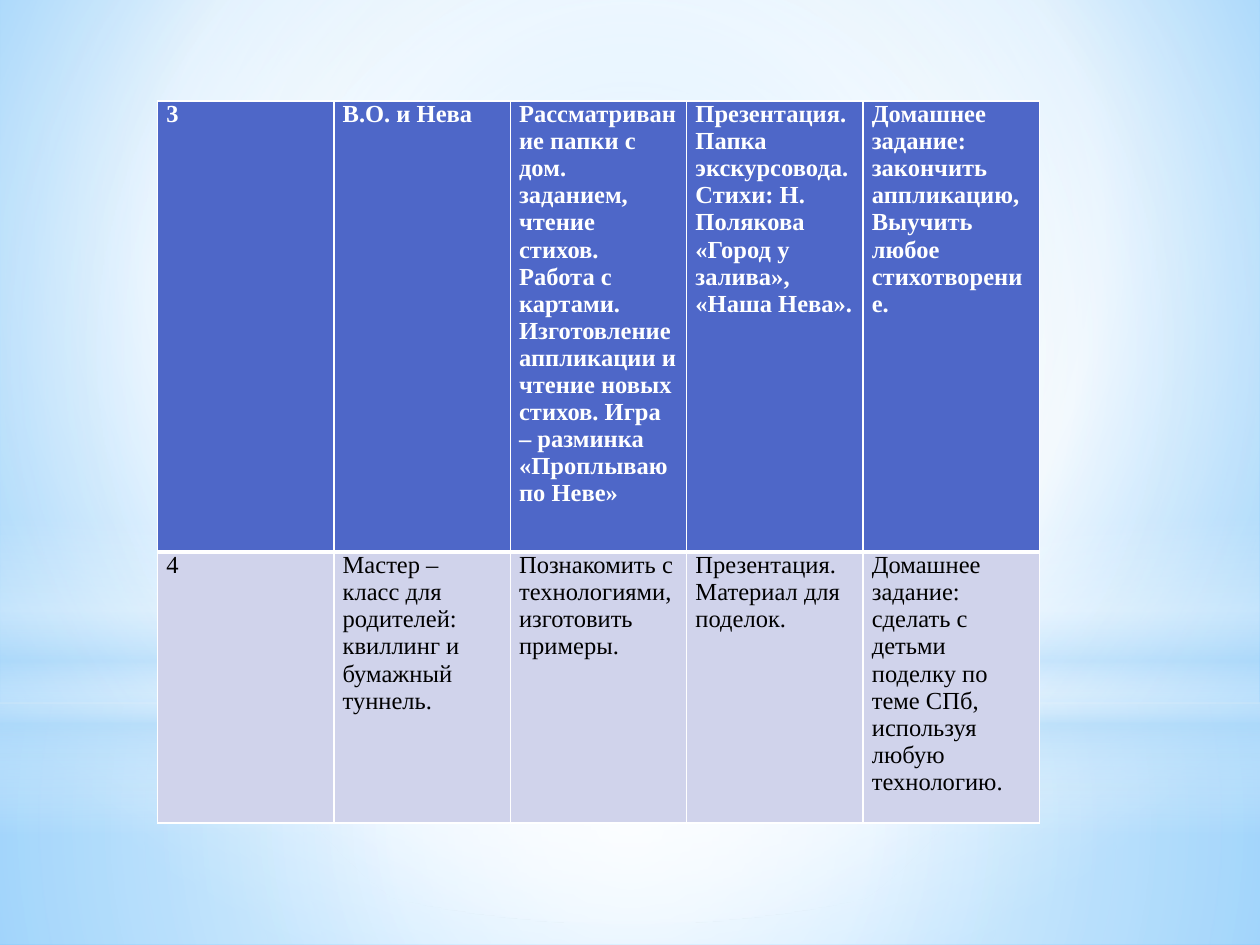
import pptx
import pptx.dml.color
import pptx.enum.shapes
import pptx.oxml
import pptx.oxml.ns
import pptx.util

COLORS = {
    "sky": "9ED5FF",
    "edge": "5BB9FF",
    "haze": "B4DCFA",
    "white": "FFFFFF",
    "black": "000000",
    "header": "4E67C8",
    "body": "D0D3EB",
}
WIDTH, HEIGHT = pptx.util.Inches(10), pptx.util.Inches(7.5)
COLUMN_WIDTH = pptx.util.Inches(1.4)
ROW_HEIGHTS = [3.58, 2.15]
RECTANGLE = pptx.enum.shapes.MSO_SHAPE.RECTANGLE
OVAL = pptx.enum.shapes.MSO_SHAPE.OVAL

CENTER = '<a:path path="circle"><a:fillToRect l="50000" t="50000" r="50000" b="50000"/></a:path>'
UPPER = '<a:path path="circle"><a:fillToRect l="20000" t="10000" r="20000" b="60000"/></a:path>'
DOWNWARD = '<a:lin ang="5400000" scaled="0"/>'

BACKDROP = [(0, "sky", 100), (60, "white", 100), (100, "edge", 100)]
GLOWS = [
    (RECTANGLE, 0.744, 0.256, CENTER,
     [(0, "white", 91), (37, "white", 76), (100, "haze", 79)]),
    (RECTANGLE, 0, 0.744, CENTER,
     [(0, "white", 89), (48, "white", 62), (100, "haze", 79)]),
    (RECTANGLE, 0.549, 0.333, DOWNWARD,
     [(0, "white", 0), (29, "white", 30), (45, "haze", 40),
      (55, "white", 26), (65, "haze", 60), (100, "white", 0)]),
    (OVAL, 0.233, 0.744, CENTER, [(0, "white", 100), (56, "white", 0)]),
]

LESSONS = [
    [
        ["3"],
        ["В.О. и Нева"],
        ["Рассматривание папки с дом. заданием, чтение стихов.",
         "Работа с картами.",
         "Изготовление аппликации и чтение новых стихов. Игра – разминка «Проплываю по Неве»"],
        ["Презентация.",
         "Папка экскурсовода.",
         "Стихи: Н. Полякова «Город у залива», «Наша Нева»."],
        ["Домашнее задание: закончить аппликацию,",
         "Выучить любое",
         "стихотворение."],
    ],
    [
        ["4"],
        ["Мастер – класс для родителей:",
         "квиллинг и бумажный туннель."],
        ["Познакомить с технологиями,",
         "изготовить примеры."],
        ["Презентация.",
         "Материал для поделок."],
        ["Домашнее задание: сделать с детьми поделку по теме СПб, используя любую технологию."],
    ],
]


def rgb(name):
    return pptx.dml.color.RGBColor.from_string(COLORS[name])


def apply_gradient(fill, element, stops, direction):
    fill.solid()
    stop_xml = "".join(
        f'<a:gs pos="{position * 1000}"><a:srgbClr val="{COLORS[color]}">'
        f'<a:alpha val="{opacity * 1000}"/></a:srgbClr></a:gs>'
        for position, color, opacity in stops
    )
    gradient = pptx.oxml.parse_xml(
        f'<a:gradFill {pptx.oxml.ns.nsdecls("a")} rotWithShape="1">'
        f"<a:gsLst>{stop_xml}</a:gsLst>{direction}</a:gradFill>"
    )
    plain = element.find(".//" + pptx.oxml.ns.qn("a:solidFill"))
    plain.getparent().replace(plain, gradient)


def add_glow(slide, outline, top, height, direction, stops):
    glow = slide.shapes.add_shape(
        outline, 0, int(HEIGHT * top), WIDTH, int(HEIGHT * height))
    glow.shadow.inherit = False
    glow.line.fill.background()
    apply_gradient(glow.fill, glow.element, stops, direction)


def set_borders(cell, widths):
    properties = cell._tc.get_or_add_tcPr()
    for index, (side, points) in enumerate(widths.items()):
        border = pptx.oxml.parse_xml(
            f'<a:ln{side} {pptx.oxml.ns.nsdecls("a")} w="{pptx.util.Pt(points)}">'
            f'<a:solidFill><a:srgbClr val="{COLORS["white"]}"/></a:solidFill></a:ln{side}>'
        )
        properties.insert(index, border)


def fill_cell(cell, lines, is_header):
    cell.margin_left = cell.margin_right = pptx.util.Inches(0.07)
    cell.margin_top = cell.margin_bottom = 0
    cell.fill.solid()
    cell.fill.fore_color.rgb = rgb("header" if is_header else "body")
    cell.text = "\n".join(lines)
    for paragraph in cell.text_frame.paragraphs:
        paragraph.font.name = "Times New Roman"
        paragraph.font.size = pptx.util.Pt(14)
        paragraph.font.bold = is_header
        paragraph.font.color.rgb = rgb("white" if is_header else "black")


def add_lesson_plan(slide):
    columns = len(LESSONS[0])
    plan = slide.shapes.add_table(
        len(LESSONS), columns, int(WIDTH * 0.125), pptx.util.Inches(0.8),
        COLUMN_WIDTH * columns, pptx.util.Inches(sum(ROW_HEIGHTS))).table
    for row, (lesson, height) in enumerate(zip(LESSONS, ROW_HEIGHTS)):
        plan.rows[row].height = pptx.util.Inches(height)
        is_header = row == 0
        widths = {"L": 1, "R": 1, "T": 1 if is_header else 3, "B": 3 if is_header else 1}
        for column, lines in enumerate(lesson):
            cell = plan.cell(row, column)
            fill_cell(cell, lines, is_header)
            set_borders(cell, widths)


def main():
    deck = pptx.Presentation()
    deck.slide_width, deck.slide_height = WIDTH, HEIGHT
    slide = deck.slides.add_slide(deck.slide_layouts[6])
    apply_gradient(slide.background.fill, slide.element, BACKDROP, UPPER)
    for glow in GLOWS:
        add_glow(slide, *glow)
    add_lesson_plan(slide)
    deck.save("out.pptx")


if __name__ == "__main__":
    main()
